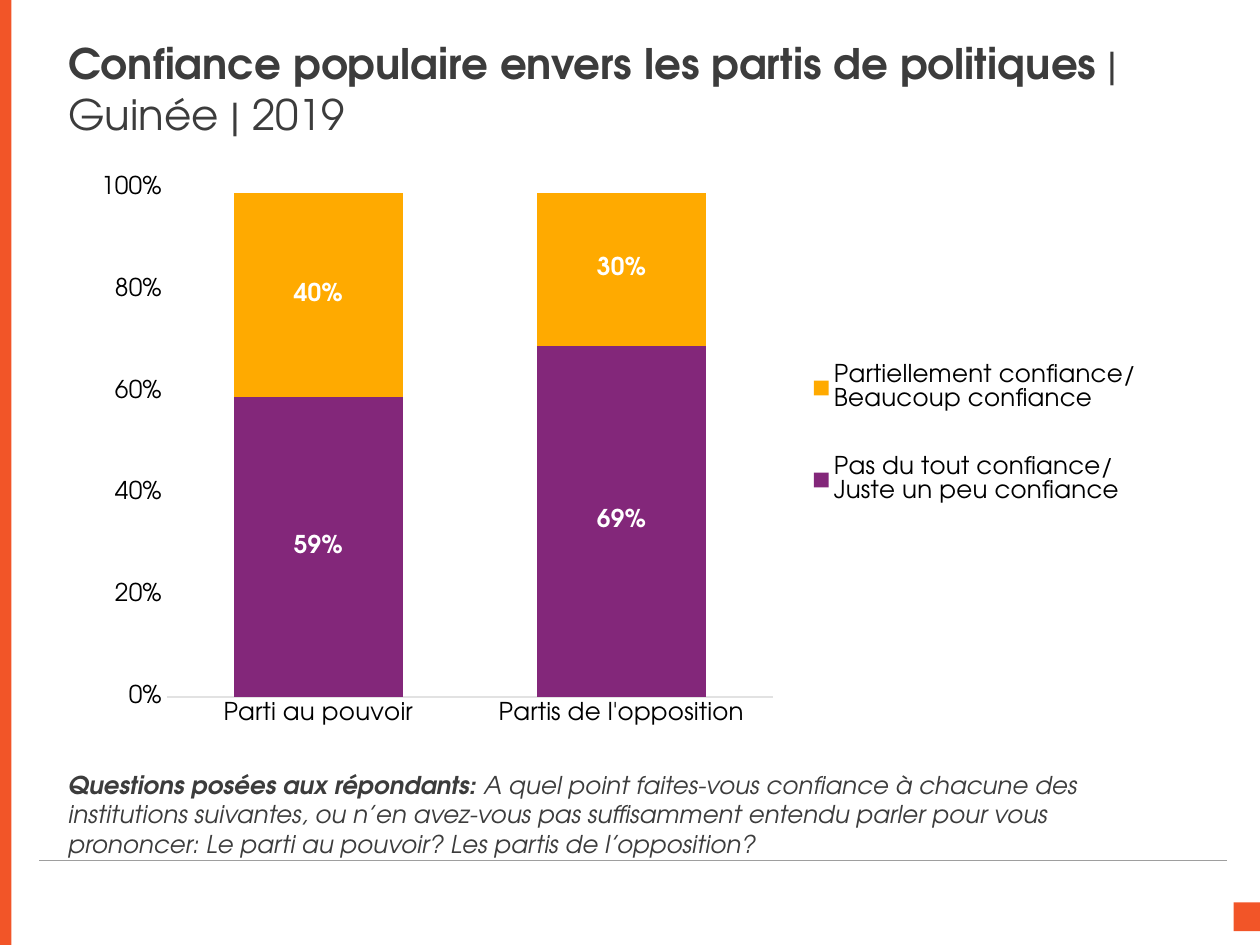
"""Build the slide on trust in political parties in Guinea, 2019."""
from lxml import etree
from pptx import Presentation
from pptx.chart.data import CategoryChartData
from pptx.dml.color import RGBColor
from pptx.enum.chart import XL_CHART_TYPE, XL_LABEL_POSITION, XL_LEGEND_POSITION, XL_TICK_MARK
from pptx.enum.shapes import MSO_CONNECTOR, MSO_SHAPE
from pptx.enum.text import MSO_ANCHOR, MSO_AUTO_SIZE, PP_ALIGN
from pptx.oxml.ns import qn
from pptx.util import Cm, Pt

COLUMN_STACKED = XL_CHART_TYPE.COLUMN_STACKED
LABEL_CENTER = XL_LABEL_POSITION.CENTER
LEGEND_RIGHT = XL_LEGEND_POSITION.RIGHT
NO_TICK = XL_TICK_MARK.NONE
STRAIGHT = MSO_CONNECTOR.STRAIGHT
RECTANGLE = MSO_SHAPE.RECTANGLE
ANCHOR_TOP, ANCHOR_MIDDLE = MSO_ANCHOR.TOP, MSO_ANCHOR.MIDDLE
NO_AUTOFIT = MSO_AUTO_SIZE.NONE
ALIGN_LEFT = PP_ALIGN.LEFT

CATEGORIES = ["Parti au pouvoir", "Partis de l'opposition"]
SERIES = [
    ("Pas du tout confiance/\nJuste un peu confiance", (0.59, 0.69), "83277A"),
    ("Partiellement confiance/\nBeaucoup confiance", (0.4, 0.3), "FFAA00"),
]


def color(value):
    return RGBColor.from_string(value)


def format_font(font, size, fill, bold=False, italic=False, name="TeX Gyre Adventor"):
    font.name = name
    font.size = Pt(size)
    font.bold = bold
    font.italic = italic
    font.color.rgb = color(fill)


def add_text(paragraph, text, **style):
    run = paragraph.add_run()
    run.text = text
    format_font(run.font, **style)


def place_chart_part(element, index, inner=False, **fractions):
    previous = element.find(qn("c:layout"))
    if previous is not None:
        element.remove(previous)
    layout = etree.Element(qn("c:layout"))
    manual = etree.SubElement(layout, qn("c:manualLayout"))
    settings = {"layoutTarget": "inner"} if inner else {}
    settings.update(xMode="edge", yMode="edge", **fractions)
    for tag, value in settings.items():
        etree.SubElement(manual, qn(f"c:{tag}")).set("val", str(value))
    element.insert(index, layout)


class SlideBuilder:
    accent = "F25528"
    rule = "9E9E9E"
    text_color = "3C3C3C"
    chart_color = "000000"
    axis_color = "E2E2E2"
    label_color = "FFFFFF"
    text_size = 14
    title_size = 24

    def __init__(self, slide):
        self.slide = slide

    def bar(self, left, top, width, height):
        shape = self.slide.shapes.add_shape(RECTANGLE, Cm(left), Cm(top), Cm(width), Cm(height))
        shape.shadow.inherit = False
        shape.fill.solid()
        shape.fill.fore_color.rgb = color(self.accent)
        shape.line.fill.background()

    def line(self, left, right, top):
        connector = self.slide.shapes.add_connector(STRAIGHT, Cm(left), Cm(top), Cm(right), Cm(top))
        connector.line.color.rgb = color(self.rule)
        connector.line.width = Pt(0.25)
        etree.SubElement(connector._element.spPr, qn("a:effectLst"))

    def placeholder(self, index, box, anchor, size, lead, rest, italic=False):
        shape = self.slide.placeholders[index]
        shape.left, shape.top, shape.width, shape.height = map(Cm, box)
        frame = shape.text_frame
        frame.word_wrap = True
        frame.auto_size = NO_AUTOFIT
        frame.vertical_anchor = anchor
        paragraph = frame.paragraphs[0]
        properties = paragraph._p.get_or_add_pPr()
        properties.set("marL", "0")
        properties.set("indent", "0")
        etree.SubElement(properties, qn("a:buNone"))
        paragraph.alignment = ALIGN_LEFT
        paragraph.space_before = Pt(0)
        for text, bold in ((lead, True), (rest, False)):
            add_text(paragraph, text, size=size, fill=self.text_color, bold=bold, italic=italic)

    def stacked_chart(self, left, top, width, height):
        data = CategoryChartData(number_format="0%")
        data.categories = CATEGORIES
        for name, values, _ in SERIES:
            data.add_series(name, values)
        chart = self.slide.shapes.add_chart(
            COLUMN_STACKED, Cm(left), Cm(top), Cm(width), Cm(height), data).chart
        chart.has_title = False
        format_font(chart.font, self.text_size, self.chart_color)
        self.axes(chart)
        plot = chart.plots[0]
        plot.gap_width = 80
        plot.overlap = 100
        plot.vary_by_categories = False
        for series, (_, _, fill) in zip(plot.series, SERIES):
            series.format.fill.solid()
            series.format.fill.fore_color.rgb = color(fill)
            labels = series.data_labels
            labels.show_value = True
            labels.number_format = "0%"
            labels.number_format_is_linked = False
            labels.position = LABEL_CENTER
            format_font(labels.font, self.text_size, self.label_color, bold=True)
        chart.has_legend = True
        legend = chart.legend
        legend.position = LEGEND_RIGHT
        legend.include_in_layout = False
        format_font(legend.font, self.text_size, self.chart_color)
        place_chart_part(legend._element, 1, x=0.68, y=0.27, w=0.32, h=0.4)
        plot_area = chart._chartSpace.chart.plotArea
        place_chart_part(plot_area, 0, inner=True, x=0.08, y=0.04, w=0.57, h=0.89)

    def axes(self, chart):
        for axis in (chart.category_axis, chart.value_axis):
            axis.has_major_gridlines = False
            axis.major_tick_mark = NO_TICK
            axis.minor_tick_mark = NO_TICK
            format_font(axis.tick_labels.font, self.text_size, self.chart_color)
        chart.category_axis.format.line.color.rgb = color(self.axis_color)
        chart.category_axis.format.line.width = Pt(0.75)
        value_axis = chart.value_axis
        value_axis.format.line.fill.background()
        value_axis.minimum_scale = 0
        value_axis.maximum_scale = 1
        value_axis.major_unit = 0.2
        value_axis.tick_labels.number_format = "0%"
        value_axis.tick_labels.number_format_is_linked = False


def main():
    presentation = Presentation()
    presentation.slide_width = Cm(25.4)
    presentation.slide_height = Cm(19.05)
    builder = SlideBuilder(presentation.slides.add_slide(presentation.slide_layouts[1]))
    builder.bar(24.87, 18.19, 0.55, 0.58)
    builder.line(0.79, 24.74, 17.35)
    builder.bar(0, 0, 0.23, 19.05)
    builder.placeholder(
        0, (1.12, 0.76, 21.97, 2.03), ANCHOR_MIDDLE, builder.title_size,
        "Confiance populaire envers les partis de politiques", " | Guinée | 2019")
    builder.placeholder(
        1, (1.12, 15.39, 23.01, 1.75), ANCHOR_TOP, builder.text_size,
        "Questions posées aux répondants: ",
        "A quel point faites-vous confiance à chacune des institutions suivantes, "
        "ou n’en avez-vous pas suffisamment entendu parler pour vous prononcer: "
        "Le parti au pouvoir? Les partis de l’opposition?", italic=True)
    builder.stacked_chart(1.65, 3.33, 21.44, 11.53)
    presentation.save("out.pptx")


if __name__ == "__main__":
    main()
